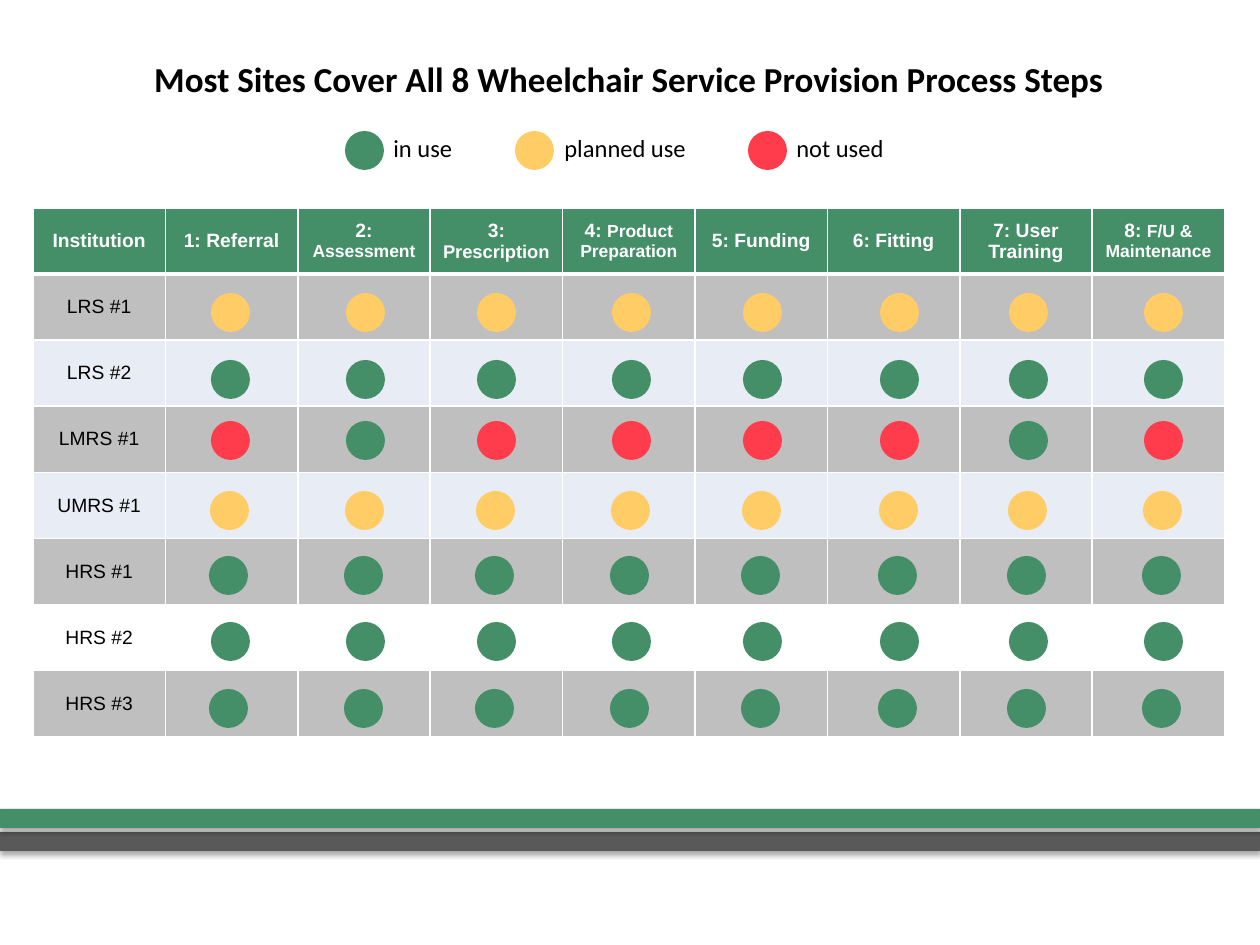
from lxml import etree
from pptx import Presentation
from pptx.dml.color import RGBColor
from pptx.enum.shapes import MSO_SHAPE
from pptx.enum.text import MSO_ANCHOR, PP_ALIGN
from pptx.oxml import parse_xml
from pptx.oxml.ns import nsdecls, qn
from pptx.util import Pt

RECT, OVAL = MSO_SHAPE.RECTANGLE, MSO_SHAPE.OVAL
MIDDLE, CENTER = MSO_ANCHOR.MIDDLE, PP_ALIGN.CENTER
PX = 914400 / 126
DOT = 39

COLORS = {
    "green": "448E68", "amber": "FFCC66", "red": "FF3C4B", "dark": "595959",
    "gray": "BFBFBF", "pale": "E8ECF4", "white": "FFFFFF", "black": "000000",
}
STATES = {"G": "green", "A": "amber", "R": "red"}

# Header number and label, with the label's size
HEADS = [
    ("", "Institution", 11), ("1: ", "Referral", 11),
    ("2: ", "Assessment", 10), ("3: ", "Prescription", 10.5),
    ("4: ", "Product Preparation", 10), ("5: ", "Funding", 11),
    ("6: ", "Fitting", 11), ("7: ", "User Training", 11),
    ("8: ", "F/U & Maintenance", 10),
]
# Site, row fill, state of each step, top of the dots, shift of the dots
SITES = [
    ("LRS #1", "gray", "AAAAAAAA", 293, 0),
    ("LRS #2", "pale", "GGGGGGGG", 360, 0),
    ("LMRS #1", "gray", "RGRRRRGR", 421, 0),
    ("UMRS #1", "pale", "AAAAAAAA", 491, -1),
    ("HRS #1", "gray", "GGGGGGGG", 556, -2),
    ("HRS #2", "white", "GGGGGGGG", 622, 0),
    ("HRS #3", "gray", "GGGGGGGG", 689, -2),
]
STEPS = [211, 346, 477, 612, 743, 880, 1009, 1144]
# Label, colour, left of the dot, left and width of the text
LEGEND = [
    ("in use", "green", 345, 381, 113),
    ("planned use", "amber", 515, 552, 174),
    ("not used", "red", 748, 784, 129),
]


def draw(kind, box, color):
    """Add a filled shape without line or shadow; box is in px."""
    shape = slide.shapes.add_shape(kind, *(int(n * PX) for n in box))
    shape.shadow.inherit = False
    shape.fill.solid()
    shape.fill.fore_color.rgb = RGBColor.from_string(COLORS[color])
    shape.line.fill.background()
    return shape


def style(run, face, size, color="black", bold=False):
    font = run.font
    font.name, font.size, font.bold = face, Pt(size), bold
    font.color.rgb = RGBColor.from_string(COLORS[color])


deck = Presentation()
deck.slide_width, deck.slide_height = int(1260 * PX), int(945 * PX)
slide = deck.slides.add_slide(deck.slide_layouts[6])

# Footer bars
for top, color in [(832, "dark"), (809, "green")]:
    bar = draw(RECT, (0, top, 1260, 19), color)
    bar.element.spPr.find(qn("a:effectLst")).append(parse_xml(
        f'<a:outerShdw {nsdecls("a")} blurRad="40000" dist="23000" '
        'dir="5400000" rotWithShape="0"><a:srgbClr val="000000">'
        '<a:alpha val="35000"/></a:srgbClr></a:outerShdw>'))

# Title
title = draw(RECT, (-1, 42, 1260, 72), "white").text_frame
title.text = "Most Sites Cover All 8 Wheelchair Service Provision Process Steps"
title.vertical_anchor = MIDDLE
title.paragraphs[0].alignment = CENTER
style(title.paragraphs[0].runs[0], "Calibri", 20, bold=True)

# Table
box = (int(n * PX) for n in (33, 208, 1192, 529))
table = slide.shapes.add_table(len(SITES) + 1, len(HEADS), *box).table
table.horz_banding = False
fills = ["green"] + [site[1] for site in SITES]
for r, fill in enumerate(fills):
    for c, (num, label, size) in enumerate(HEADS):
        cell = table.cell(r, c)
        props = cell._tc.get_or_add_tcPr()
        for side in "LRTB":
            thick = (r, side) in [(0, "B"), (1, "T")]
            line = etree.SubElement(props, qn(f"a:ln{side}"),
                                    w=str(Pt(3 if thick else 1)))
            paint = etree.SubElement(line, qn("a:solidFill"))
            etree.SubElement(paint, qn("a:srgbClr"), val=COLORS["white"])
        cell.fill.solid()
        cell.fill.fore_color.rgb = RGBColor.from_string(COLORS[fill])
        cell.vertical_anchor = MIDDLE
        cell.margin_top = cell.margin_bottom = int(5 * PX)
        para = cell.text_frame.paragraphs[0]
        para.alignment = CENTER
        if r == 0:
            for text, pt in [(num, 11), (label, size)]:
                if text:
                    run = para.add_run()
                    run.text = text
                    style(run, "Arial", pt, "white", True)
        elif c == 0:
            para.text = SITES[r - 1][0]
            style(para.runs[0], "Arial", 11)

# Legend
for label, color, left, start, width in LEGEND:
    draw(OVAL, (left, 131, DOT, DOT), color)
    box = (int(n * PX) for n in (start, 127, width, 43))
    frame = slide.shapes.add_textbox(*box).text_frame
    frame.word_wrap = True
    frame.text = label
    style(frame.paragraphs[0].runs[0], "Calibri", 14)

# Status dots
for name, fill, states, top, shift in SITES:
    for left, state in zip(STEPS, states):
        draw(OVAL, (left + shift, top, DOT, DOT), STATES[state])

deck.save("out.pptx")
